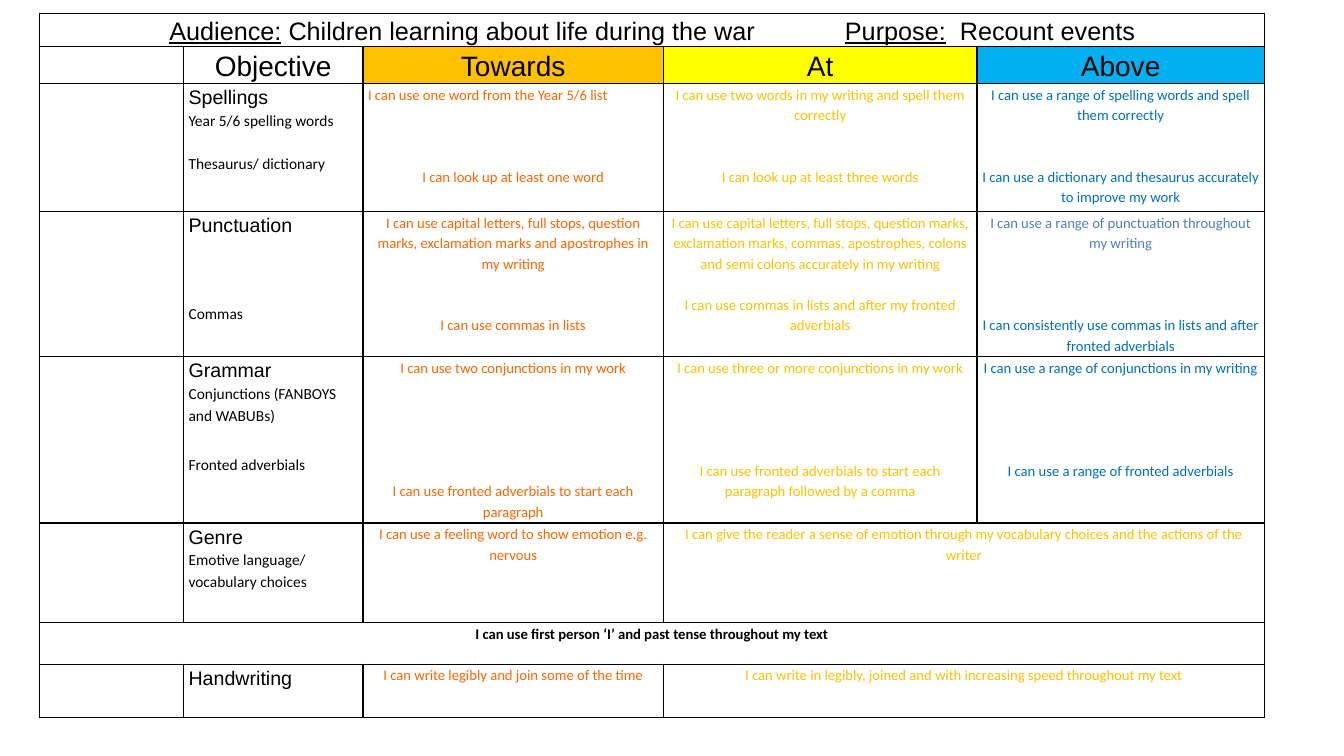
from lxml.etree import SubElement
from pptx import Presentation
from pptx.dml.color import RGBColor
from pptx.enum.text import PP_ALIGN as Align
from pptx.oxml.ns import qn
from pptx.util import Inches, Pt

BLACK = RGBColor(0x00, 0x00, 0x00)
WHITE = RGBColor(0xFF, 0xFF, 0xFF)
ORANGE = RGBColor(0xFF, 0x66, 0x00)
AMBER = RGBColor(0xFF, 0xC0, 0x00)
YELLOW = RGBColor(0xFF, 0xFF, 0x00)
SKY = RGBColor(0x00, 0xB0, 0xF0)
BLUE = RGBColor(0x00, 0x70, 0xC0)
STEEL = RGBColor(0x4F, 0x81, 0xBD)

COLUMNS = [1.43, 1.78, 2.98, 3.11, 2.85]
ROWS = [0.33, 0.37, 1.27, 1.44, 1.65, 0.99, 0.41, 0.53]
HEADINGS = [("Objective", WHITE), ("Towards", AMBER), ("At", YELLOW), ("Above", SKY)]
LEVEL_COLOURS = [ORANGE, AMBER, BLUE]

# Row number: title, then label lines and level lines as (blank lines before, text)
OBJECTIVES = {
    2: ("Spellings",
        [(0, "Year 5/6 spelling words"), (1, "Thesaurus/ dictionary")],
        [[(0, "I can use one word from the Year 5/6 list"),
          (3, "I can look up at least one word")],
         [(0, "I can use two words in my writing and spell them correctly"),
          (2, "I can look up at least three words")],
         [(0, "I can use a range of spelling words and spell them correctly"),
          (2, "I can use a dictionary and thesaurus accurately to improve my work")]]),
    3: ("Punctuation",
        [(3, "Commas")],
        [[(0, "I can use capital letters, full stops, question marks, exclamation marks "
              "and apostrophes in my writing"),
          (2, "I can use commas in lists")],
         [(0, "I can use capital letters, full stops, question marks, exclamation marks, "
              "commas, apostrophes, colons and semi colons accurately in my writing"),
          (1, "I can use commas in lists and after my fronted adverbials")],
         [(0, "I can use a range of punctuation throughout my writing"),
          (3, "I can consistently use commas in lists and after fronted adverbials")]]),
    4: ("Grammar",
        [(0, "Conjunctions (FANBOYS and WABUBs)"), (1.25, "Fronted adverbials")],
        [[(0, "I can use two conjunctions in my work"),
          (5, "I can use fronted adverbials to start each paragraph")],
         [(0, "I can use three or more conjunctions in my work"),
          (4, "I can use fronted adverbials to start each paragraph followed by a comma")],
         [(0, "I can use a range of conjunctions in my writing"),
          (4, "I can use a range of fronted adverbials")]]),
    5: ("Genre",
        [(0, "Emotive language/ vocabulary choices")],
        [[(0, "I can use a feeling word to show emotion e.g. nervous")],
         [(0, "I can give the reader a sense of emotion through my vocabulary choices "
              "and the actions of the writer")]]),
    7: ("Handwriting",
        [],
        [[(0, "I can write legibly and join some of the time")],
         [(0, "I can write in legibly, joined and with increasing speed throughout my text")]]),
}


class AssessmentPage:
    heading_font = "Arial"
    body_font = "Calibri"
    body_size = 10.5
    label_size = 11
    line_factor = 1.4  # height of one text line relative to its font size

    def __init__(self, deck):
        self.page = deck.slides.add_slide(deck.slide_layouts[6])

    def grid(self, left, top, columns, rows):
        frame = self.page.shapes.add_table(
            len(rows), len(columns), Inches(left), Inches(top),
            Inches(sum(columns)), Inches(sum(rows)))
        self.table = frame.table
        self.table.first_row = self.table.horz_banding = False
        for column, width in zip(self.table.columns, columns):
            column.width = Inches(width)
        for row, height in zip(self.table.rows, rows):
            row.height = Inches(height)
        for cell in self.table.iter_cells():
            cell.margin_left = cell.margin_right = Inches(0.05)
            cell.margin_top = cell.margin_bottom = 0
            self.border(cell)
            self.fill(cell, WHITE)

    def border(self, cell):
        properties = cell._tc.get_or_add_tcPr()
        for side in ("a:lnL", "a:lnR", "a:lnT", "a:lnB"):
            line = SubElement(properties, qn(side), w=str(Pt(1)))
            solid = SubElement(line, qn("a:solidFill"))
            SubElement(solid, qn("a:srgbClr"), val=str(BLACK))

    def fill(self, cell, colour):
        cell.fill.solid()
        cell.fill.fore_color.rgb = colour

    def merge(self, row, first, last):
        self.table.cell(row, first).merge(self.table.cell(row, last))

    def para(self, cell, align=Align.LEFT, gap=0):
        frame = cell.text_frame
        para = frame.paragraphs[0]
        if para.runs:
            para = frame.add_paragraph()
        para.alignment = align
        para.line_spacing = 1.15
        para.space_before = Pt(gap)
        return para

    def span(self, para, text, size, font, colour=BLACK, bold=False, underline=False):
        span = para.add_run()
        span.text = text
        span.font.size = Pt(size)
        span.font.name = font
        span.font.color.rgb = colour
        span.font.bold = bold
        span.font.underline = underline

    def tabs(self, para, positions):
        stops = SubElement(para._p.get_or_add_pPr(), qn("a:tabLst"))
        for position in positions:
            SubElement(stops, qn("a:tab"), pos=str(Inches(position)), algn="l")

    def heading(self, cell, text, size, align=Align.LEFT):
        self.span(self.para(cell, align), text, size, self.heading_font)

    def lines(self, cell, entries, size, colour=BLACK, align=Align.LEFT):
        for blank_lines, text in entries:
            para = self.para(cell, align, blank_lines * size * self.line_factor)
            self.span(para, text, size, self.body_font, colour)


def main():
    deck = Presentation()
    deck.slide_width, deck.slide_height = Inches(13.33), Inches(7.5)
    sheet = AssessmentPage(deck)
    sheet.grid(0.39, 0.13, COLUMNS, ROWS)
    cell = sheet.table.cell

    # Audience and purpose
    sheet.merge(0, 0, 4)
    banner = sheet.para(cell(0, 0))
    sheet.tabs(banner, [1.24, 7.94])
    for text, underline in [("\t", False), ("Audience:", True),
                            (" Children learning about life during the war", False),
                            ("\t", False), ("Purpose:", True),
                            ("  Recount events", False)]:
        sheet.span(banner, text, 18, sheet.heading_font, underline=underline)

    # Column headings
    for column, (text, colour) in enumerate(HEADINGS, start=1):
        sheet.fill(cell(1, column), colour)
        sheet.heading(cell(1, column), text, 20, Align.CENTER)

    # Objectives with their levels
    for row, (title, labels, levels) in OBJECTIVES.items():
        sheet.heading(cell(row, 1), title, 14)
        sheet.lines(cell(row, 1), labels, sheet.label_size)
        if len(levels) == 2:
            sheet.merge(row, 3, 4)
        for column, (entries, colour) in enumerate(zip(levels, LEVEL_COLOURS), start=2):
            sheet.lines(cell(row, column), entries, sheet.body_size, colour, Align.CENTER)

    # Exceptions to the level style
    cell(2, 2).text_frame.paragraphs[0].alignment = Align.LEFT
    cell(3, 4).text_frame.paragraphs[0].runs[0].font.color.rgb = STEEL

    # Objective shared by all levels
    sheet.merge(6, 0, 4)
    sheet.span(sheet.para(cell(6, 0), Align.CENTER),
               "I can use first person ‘I’ and past tense throughout my text",
               sheet.body_size, sheet.body_font, bold=True)

    deck.save("out.pptx")


if __name__ == "__main__":
    main()
